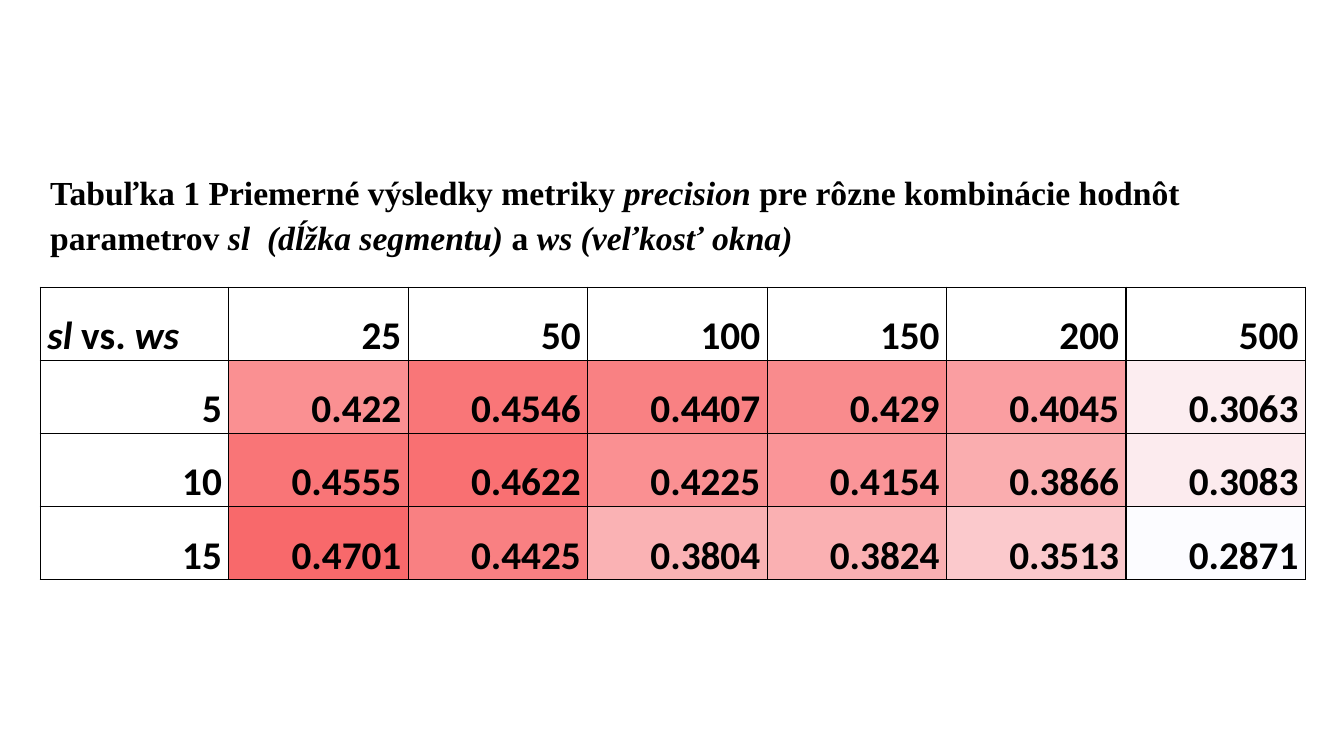
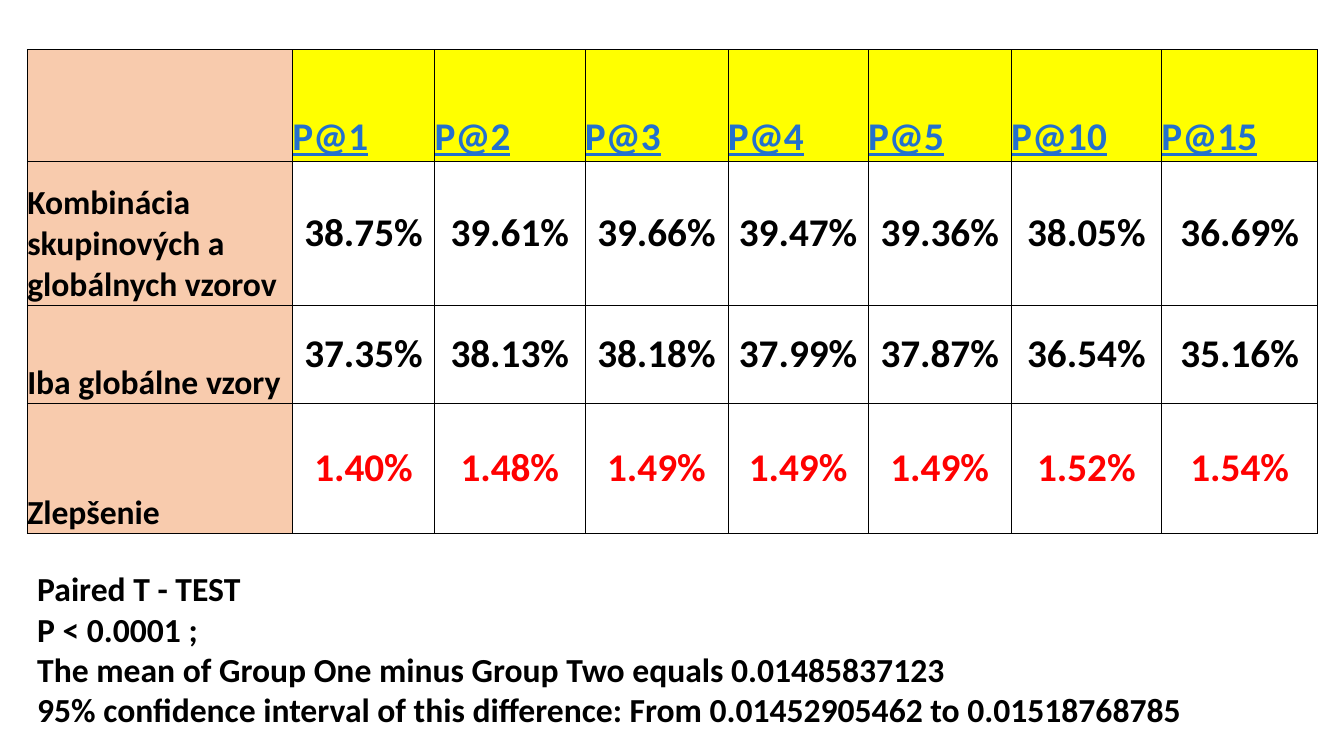
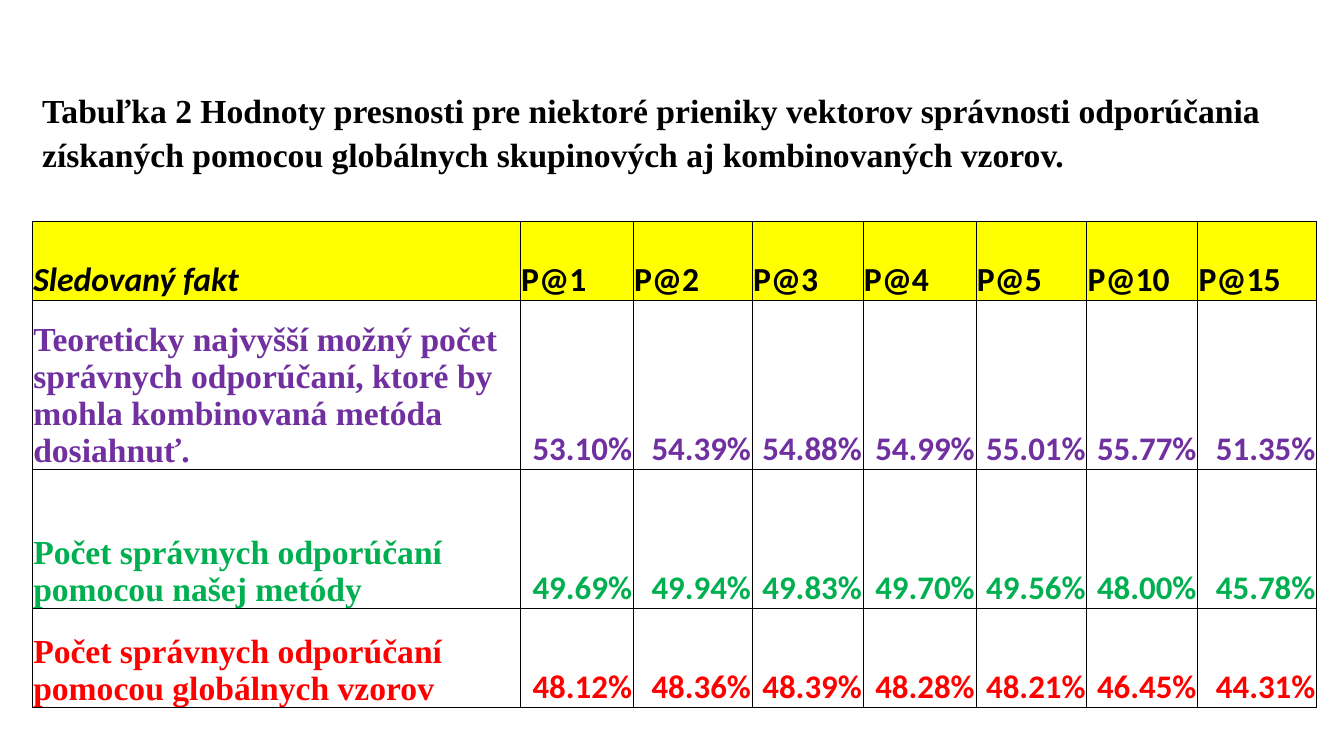
from dataclasses import dataclass, replace
from math import ceil

from lxml.etree import SubElement
from pptx import Presentation
from pptx.dml.color import RGBColor
from pptx.enum.text import MSO_ANCHOR as Anchor, PP_ALIGN as Align
from pptx.oxml.ns import qn
from pptx.util import Inches, Pt

COLORS = {
    "black": "000000", "white": "FFFFFF", "yellow": "FFFF00", "peach": "F8CBAD",
    "blue": "2370CD", "red": "FF0000", "purple": "7030A0", "green": "00B050",
    "heat_low": "FCFCFF", "heat_high": "F8696B",
}
SANS, SERIF = "Calibri", "Times New Roman"
PRECISION_LABELS = [f"P@{count}" for count in (1, 2, 3, 4, 5, 10, 15)]


@dataclass(frozen=True)
class Style:
    """Look of one paragraph and of the cell that holds it."""
    size: float = 24
    font: str = SANS
    color: str = "black"
    underline: bool = False
    align: Align = Align.LEFT
    anchor: Anchor = Anchor.BOTTOM
    spacing: float = 1.0


@dataclass(frozen=True)
class Cell:
    """Content of a table cell; runs are (text, italic) pairs."""
    runs: tuple
    style: Style
    fill: str = COLORS["white"]


def plain(text, style, fill="white"):
    """Return a cell with one upright run."""
    return Cell(((text, False),), style, COLORS[fill])


def heat(value, low, high):
    """Return the hex colour of a value on the heat scale."""
    share = (high - value) / (high - low)
    ends = zip(*(RGBColor.from_string(COLORS[name]) for name in ("heat_high", "heat_low")))
    return "".join(f"{ceil(start + share * (end - start)):02X}" for start, end in ends)


class Deck:
    """Presentation with a current slide; lengths are percent of the slide's size."""

    def __init__(self):
        """Create an empty widescreen presentation."""
        self.presentation = Presentation()
        self.presentation.slide_width = Inches(13.33)
        self.presentation.slide_height = Inches(7.5)
        self.slide = None

    def add_slide(self):
        """Start a new blank slide."""
        self.slide = self.presentation.slides.add_slide(self.presentation.slide_layouts[6])

    def across(self, share):
        """Convert percent of the width to a length."""
        return round(self.presentation.slide_width * share / 100)

    def down(self, share):
        """Convert percent of the height to a length."""
        return round(self.presentation.slide_height * share / 100)

    def add_runs(self, paragraph, runs, style):
        """Fill a paragraph run by run."""
        paragraph.alignment = style.align
        paragraph.line_spacing = style.spacing
        for text, italic in runs:
            run = paragraph.add_run()
            run.text = text
            font = run.font
            font.name, font.size, font.bold = style.font, Pt(style.size), True
            font.italic, font.underline = italic, style.underline
            font.color.rgb = RGBColor.from_string(COLORS[style.color])

    def text(self, left, top, width, height, paragraphs, style):
        """Add a wrapped text box."""
        box = self.slide.shapes.add_textbox(
            self.across(left), self.down(top), self.across(width), self.down(height))
        frame = box.text_frame
        frame.word_wrap = True
        for index, runs in enumerate(paragraphs):
            paragraph = frame.add_paragraph() if index else frame.paragraphs[0]
            self.add_runs(paragraph, runs, style)

    def caption(self, left, top, width, runs):
        """Add a two-line serif table caption."""
        self.text(left, top, width, 12.13, [runs], Style(font=SERIF, spacing=1.1))

    def border(self, cell, width):
        """Draw black lines on all sides of a cell."""
        properties = cell._tc.get_or_add_tcPr()
        for side in ("a:lnL", "a:lnR", "a:lnT", "a:lnB"):
            line = SubElement(properties, qn(side), w=str(Pt(width)))
            fill = SubElement(line, qn("a:solidFill"))
            SubElement(fill, qn("a:srgbClr"), val=COLORS["black"])

    def table(self, left, top, columns, rows, cells, line=0.5, insets=(0, 0)):
        """Add a bordered table; insets are (sides, top) in inches."""
        shape = self.slide.shapes.add_table(
            len(rows), len(columns), self.across(left), self.down(top),
            self.across(sum(columns)), self.down(sum(rows)))
        table = shape.table
        table.first_row = table.horz_banding = False
        for column, width in zip(table.columns, columns):
            column.width = self.across(width)
        for row, height in zip(table.rows, rows):
            row.height = self.down(height)
        sides, above = insets
        for row_index, row_cells in enumerate(cells):
            for column_index, content in enumerate(row_cells):
                cell = table.cell(row_index, column_index)
                cell.margin_left = cell.margin_right = Inches(sides)
                cell.margin_top, cell.margin_bottom = Inches(above), 0
                cell.vertical_anchor = content.style.anchor
                self.border(cell, line)
                cell.fill.solid()
                cell.fill.fore_color.rgb = RGBColor.from_string(content.fill)
                self.add_runs(cell.text_frame.paragraphs[0], content.runs, content.style)


def parameter_slide(deck):
    """Average precision by segment length and window size."""
    deck.add_slide()
    results = {
        5: (0.422, 0.4546, 0.4407, 0.429, 0.4045, 0.3063),
        10: (0.4555, 0.4622, 0.4225, 0.4154, 0.3866, 0.3083),
        15: (0.4701, 0.4425, 0.3804, 0.3824, 0.3513, 0.2871),
    }
    values = [value for row in results.values() for value in row]
    low, high = min(values), max(values)
    label = Style(size=28, spacing=1.15)
    number = replace(label, align=Align.RIGHT)
    corner = Cell((("sl", True), (" vs. ", False), ("ws", True)), label)
    cells = [[corner] + [plain(str(size), number) for size in (25, 50, 100, 150, 200, 500)]]
    for length, row in results.items():
        cells.append([plain(str(length), number)] + [
            Cell(((str(value), False),), number, heat(value, low, high)) for value in row])
    deck.table(3, 38, [14.03] + [13.35] * 6, [9.67] * 4, cells, line=1, insets=(0.07, 0))
    deck.caption(3, 21.6, 93.92, [
        ("Tabuľka 1 Priemerné výsledky metriky ", False), ("precision", True),
        (" pre rôzne kombinácie hodnôt parametrov ", False),
        ("sl  (dĺžka segmentu) ", True), ("a ", False), ("ws (veľkosť okna)", True)])


def improvement_slide(deck):
    """Combined patterns against global patterns, with the test result."""
    deck.add_slide()
    label = Style()
    header = Style(size=28, color="blue", underline=True)
    number = Style(size=28, align=Align.CENTER, anchor=Anchor.MIDDLE)
    results = [
        ("Kombinácia skupinových a globálnych vzorov", "black",
         "38.75 39.61 39.66 39.47 39.36 38.05 36.69"),
        ("Iba globálne vzory", "black", "37.35 38.13 38.18 37.99 37.87 36.54 35.16"),
        ("Zlepšenie", "red", "1.40 1.48 1.49 1.49 1.49 1.52 1.54"),
    ]
    cells = [[Cell((), label, COLORS["peach"])]
             + [plain(text, header, "yellow") for text in PRECISION_LABELS]]
    for name, color, values in results:
        cells.append([plain(name, label, "peach")] + [
            plain(f"{value}%", replace(number, color=color)) for value in values.split()])
    deck.table(2.03, 6.53, [19.73, 10.58, 11.18, 10.65, 10.43, 10.65, 11.18, 11.63],
               [14.8, 19.07, 12.93, 17.2], cells)
    lines = (
        "Paired T - TEST",
        "P < 0.0001 ;",
        "The mean of Group One minus Group Two equals 0.01485837123",
        "95% confidence interval of this difference: From 0.01452905462 to 0.01518768785",
    )
    deck.text(2.03, 74.53, 90.55, 22.93, [[(line, False)] for line in lines], label)


def intersection_slide(deck):
    """Precision for intersections of recommendation vectors."""
    deck.add_slide()
    header = Style()
    results = [
        ("Teoreticky najvyšší možný počet správnych odporúčaní, ktoré by mohla "
         "kombinovaná metóda dosiahnuť.", "purple",
         "53.10 54.39 54.88 54.99 55.01 55.77 51.35"),
        ("Počet správnych odporúčaní pomocou našej metódy", "green",
         "49.69 49.94 49.83 49.70 49.56 48.00 45.78"),
        ("Počet správnych odporúčaní pomocou globálnych vzorov", "red",
         "48.12 48.36 48.39 48.28 48.21 46.45 44.31"),
    ]
    cells = [[Cell((("Sledovaný fakt", True),), header, COLORS["yellow"])]
             + [plain(text, header, "yellow") for text in PRECISION_LABELS]]
    for name, color, values in results:
        number = Style(size=23.5, color=color, align=Align.RIGHT)
        cells.append([plain(name, Style(font=SERIF, color=color))] + [
            plain(f"{value}%", number) for value in values.split()])
    deck.table(2.4, 29.33, [36.31, 8.4, 8.85, 8.25, 8.4, 8.25, 8.25, 8.85],
               [10.4, 22.4, 18.4, 13.07], cells, insets=(0.01, 0.01))
    deck.caption(2.4, 10.67, 95.57, [
        ("Tabuľka 2 Hodnoty presnosti pre niektoré prieniky vektorov správnosti odporúčania "
         "získaných pomocou globálnych skupinových aj kombinovaných vzorov.", False)])


def main():
    """Build and save the presentation."""
    deck = Deck()
    for build in (parameter_slide, improvement_slide, intersection_slide):
        build(deck)
    deck.presentation.save("out.pptx")


if __name__ == "__main__":
    main()
